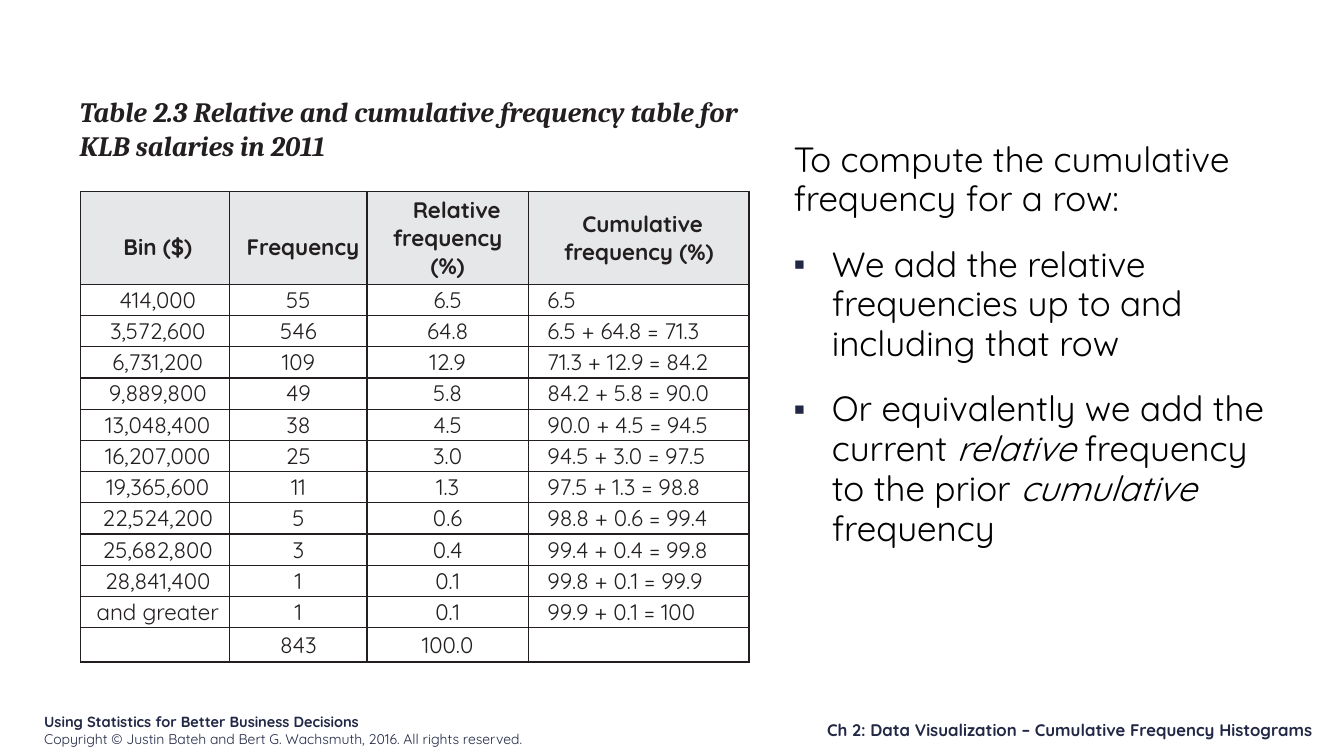
from lxml.etree import SubElement
from pptx import Presentation
from pptx.dml.color import RGBColor
from pptx.enum.text import MSO_ANCHOR, MSO_AUTO_SIZE, PP_ALIGN
from pptx.oxml.ns import qn
from pptx.util import Inches, Pt

NAVY, INK, BLACK, GREY = "212745", "231F20", "000000", "E6E7E8"
SANS, SERIF = "Quicksand", "Cambria"

HEADS = ["Bin ($)", "Frequency", "Relative frequency (%)", "Cumulative frequency (%)"]
ROWS = [
    ("414,000", "55", "6.5", "6.5"),
    ("3,572,600", "546", "64.8", "6.5 + 64.8 = 71.3"),
    ("6,731,200", "109", "12.9", "71.3 + 12.9 = 84.2"),
    ("9,889,800", "49", "5.8", "84.2 + 5.8 = 90.0"),
    ("13,048,400", "38", "4.5", "90.0 + 4.5 = 94.5"),
    ("16,207,000", "25", "3.0", "94.5 + 3.0 = 97.5"),
    ("19,365,600", "11", "1.3", "97.5 + 1.3 = 98.8"),
    ("22,524,200", "5", "0.6", "98.8 + 0.6 = 99.4"),
    ("25,682,800", "3", "0.4", "99.4 + 0.4 = 99.8"),
    ("28,841,400", "1", "0.1", "99.8 + 0.1 = 99.9"),
    ("and greater", "1", "0.1", "99.9 + 0.1 = 100"),
    ("", "843", "100.0", ""),
]
WIDTHS = [1.48, 1.36, 1.6, 2.19]
HEIGHTS = [0.92] + [0.31] * 11 + [0.34]
# Left, first-line and right indents of each column
HEAD_INDENTS = [(0.05, 0, 0), (0.09, 0, 0), (0.08, 0.18, 0.08), (0.32, 0.08, 0.32)]
DATA_INDENTS = [(0.05, 0, 0), (0, 0, 0), (0, 0, 0), (0.19, 0, 0)]


def paint(target, color):
    target.rgb = RGBColor.from_string(color)


def style(para, size, color, face=SANS, bold=False, italic=False, align=PP_ALIGN.LEFT):
    font = para.font
    font.name, font.size, font.bold, font.italic = face, Pt(size), bold, italic
    paint(font.color, color)
    para.alignment = align


def indent(para, left, first=0, right=0):
    props = para._p.get_or_add_pPr()
    for name, value in (("marL", left), ("indent", first), ("marR", right)):
        props.set(name, str(Inches(value)))
    return props


def place(shape, box):
    shape.left, shape.top, shape.width, shape.height = map(Inches, box)


def add_text(slide, box, anchor=MSO_ANCHOR.TOP):
    frame = slide.shapes.add_textbox(*map(Inches, box)).text_frame
    frame.word_wrap, frame.vertical_anchor = True, anchor
    return frame


def add_footer(slide, box):
    left, top, width, height = box
    frame = add_text(slide, (left, top, 5.28, height))
    book = frame.paragraphs[0]
    book.text = "Using Statistics for Better Business Decisions"
    style(book, 10.5, NAVY, bold=True)
    rights = frame.add_paragraph()
    rights.text = "Copyright © Justin Bateh and Bert G. Wachsmuth, 2016. All rights reserved."
    style(rights, 10, NAVY)

    part = (left + width - 6.62, top + 0.07, 6.62, 0.3)
    chapter = add_text(slide, part, MSO_ANCHOR.BOTTOM).paragraphs[0]
    chapter.text = "Ch 2: Data Visualization – Cumulative Frequency Histograms"
    style(chapter, 12, NAVY, bold=True, align=PP_ALIGN.RIGHT)


def add_caption(slide, box):
    title = slide.shapes.title
    place(title, box)
    frame = title.text_frame
    frame.auto_size, frame.vertical_anchor = MSO_AUTO_SIZE.NONE, MSO_ANCHOR.TOP
    para = frame.paragraphs[0]
    para.text = "Table 2.3 Relative and cumulative frequency table for KLB salaries in 2011"
    style(para, 20, INK, SERIF, bold=True, italic=True)
    indent(para, 0.07)


def add_bullet(props):
    color = SubElement(props, qn("a:buClr"))
    SubElement(color, qn("a:srgbClr"), val=NAVY)
    SubElement(props, qn("a:buSzPct"), val="95000")
    SubElement(props, qn("a:buFont"), typeface="Arial")
    SubElement(props, qn("a:buChar"), char="▪")


def add_steps(slide, box):
    body = slide.placeholders[1]
    place(body, box)
    frame = body.text_frame
    frame.auto_size = MSO_AUTO_SIZE.NONE
    steps = [
        ["To compute the cumulative frequency for a row:"],
        ["We add the relative frequencies up to and including that row"],
        ["Or equivalently we add the current ", "relative ",
         "frequency to the prior ", "cumulative ", "frequency"],
    ]
    for i, parts in enumerate(steps):
        para = frame.add_paragraph() if i else frame.paragraphs[0]
        style(para, 25, BLACK)
        para.line_spacing = 0.95
        para.space_before, para.space_after = Pt(6), Pt(12)
        for j, words in enumerate(parts):
            run = para.add_run()
            run.text = words
            if j % 2:
                run.font.italic = True
        if i:
            add_bullet(indent(para, 0.45, -0.38))
        else:
            SubElement(indent(para, 0.07), qn("a:buNone"))


def set_borders(cell):
    props = cell._tc.get_or_add_tcPr()
    for i, side in enumerate(("a:lnL", "a:lnR", "a:lnT", "a:lnB")):
        line = props.makeelement(qn(side), {"w": str(Pt(1))})
        SubElement(SubElement(line, qn("a:solidFill")), qn("a:srgbClr"), val=INK)
        props.insert(i, line)


def fill_cell(cell, text, col, head):
    cell.margin_left = cell.margin_right = cell.margin_top = cell.margin_bottom = 0
    cell.vertical_anchor = MSO_ANCHOR.MIDDLE
    if head:
        cell.fill.solid()
        paint(cell.fill.fore_color, GREY)
        if col < 2:
            cell.margin_top = Pt(13)
    else:
        cell.fill.background()
    set_borders(cell)
    para = cell.text_frame.paragraphs[0]
    para.text = text
    align = PP_ALIGN.CENTER if head or col < 3 else PP_ALIGN.LEFT
    style(para, 16, INK, bold=head, align=align)
    para.space_before = Pt(1)
    indent(para, *(HEAD_INDENTS if head else DATA_INDENTS)[col])


def add_grid(slide, box):
    shape = slide.shapes.add_table(len(HEIGHTS), len(WIDTHS), *map(Inches, box))
    table = shape.table
    table.horz_banding = table.first_row = False
    for col, width in zip(table.columns, WIDTHS):
        col.width = Inches(width)
    for row, height in zip(table.rows, HEIGHTS):
        row.height = Inches(height)
    for r, texts in enumerate([HEADS] + ROWS):
        for c, text in enumerate(texts):
            fill_cell(table.cell(r, c), text, c, r == 0)


def main():
    deck = Presentation()
    deck.slide_width, deck.slide_height = Inches(13.33), Inches(7.5)
    slide = deck.slides.add_slide(deck.slide_layouts[1])
    add_footer(slide, (0.34, 7.02, 12.78, 0.4))
    add_steps(slide, (7.7, 1.34, 5.11, 5.07))
    add_caption(slide, (0.62, 0.89, 6.81, 0.77))
    add_grid(slide, (0.8, 1.9, sum(WIDTHS), sum(HEIGHTS)))
    deck.save("out.pptx")


if __name__ == "__main__":
    main()
